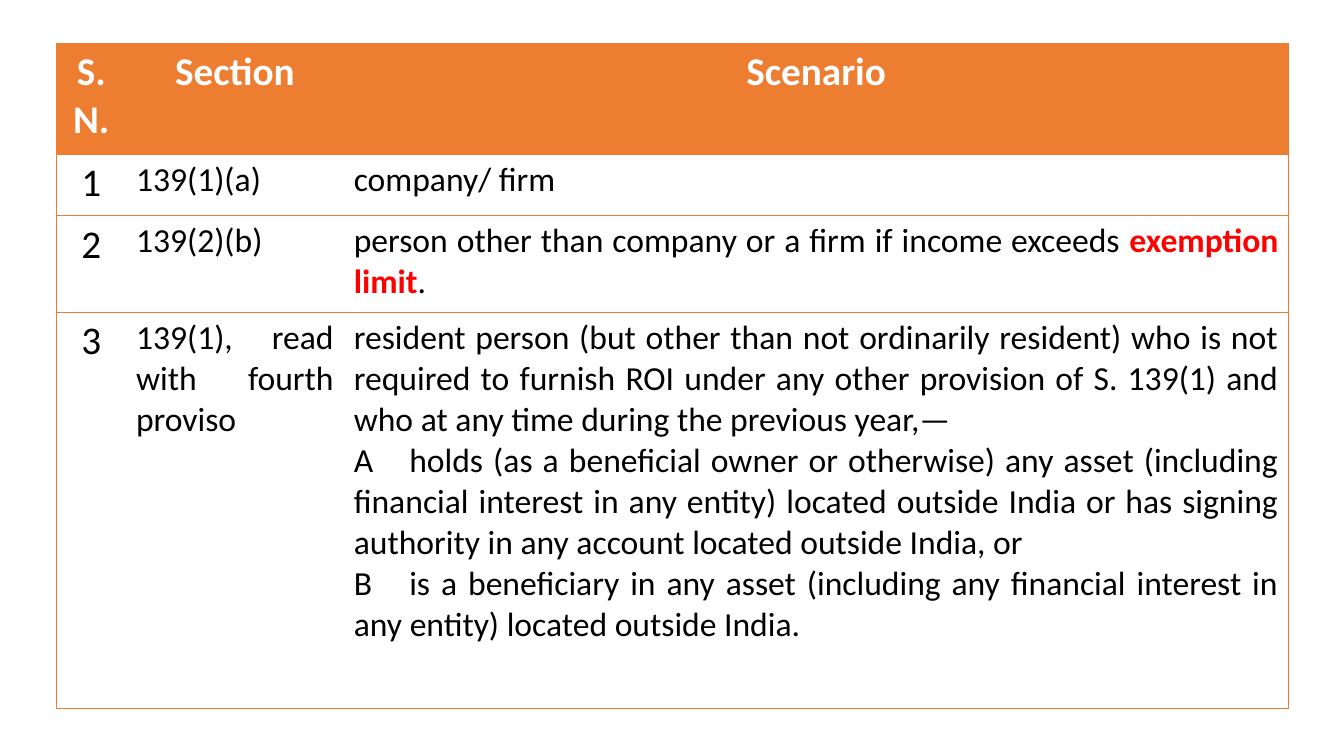
import pptx
import pptx.util
import pptx.dml.color
import pptx.enum.text
import pptx.oxml
import pptx.oxml.ns
from pptx.util import Inches

COLORS = {"orange": "ED7D31", "white": "FFFFFF", "black": "000000", "red": "FF0000"}
CENTER = pptx.enum.text.PP_ALIGN.CENTER
JUSTIFY = pptx.enum.text.PP_ALIGN.JUSTIFY
NS = pptx.oxml.ns.nsdecls("a")

# Each cell is a list of paragraphs; *stars* mark emphasis
HEADER = [["S.N."], ["Section"], ["Scenario"]]
SCENARIOS = [
    [["1"], ["139(1)(a)"], ["company/ firm"]],
    [["2"], ["139(2)(b)"],
     ["person other than company or a firm if income exceeds *exemption limit*."]],
    [["3"], ["139(1), read with fourth proviso"],
     ["resident person (but other than not ordinarily resident) who is not required "
      "to furnish ROI under any other provision of S. 139(1) and who at any time "
      "during the previous year,—",
      "A\tholds (as a beneficial owner or otherwise) any asset (including financial "
      "interest in any entity) located outside India or has signing authority in any "
      "account located outside India, or",
      "B\tis a beneficiary in any asset (including any financial interest in any "
      "entity) located outside India."]],
]


def rgb(name):
    return pptx.dml.color.RGBColor.from_string(COLORS[name])


class SlideBuilder:
    font = "Calibri"
    border_pt = 0.5

    def __init__(self, prs):
        self.s = prs.slides.add_slide(prs.slide_layouts[6])

    def paragraph(self, p, text, size, color, bold, align):
        p.alignment = align
        for i, part in enumerate(text.split("*")):
            emphasis = i % 2 == 1
            r = p.add_run()
            r.text = part
            r.font.name = self.font
            r.font.size = pptx.util.Pt(size)
            r.font.bold = bold or emphasis
            r.font.color.rgb = rgb("red" if emphasis else color)
        if "\t" in text:
            p._p.get_or_add_pPr().append(pptx.oxml.parse_xml(
                f'<a:tabLst {NS}><a:tab pos="{Inches(0.55)}" algn="l"/></a:tabLst>'))

    def borders(self, cell, drawn):
        width = pptx.util.Pt(self.border_pt)
        for side in "LRTB":
            fill = (f'<a:solidFill><a:srgbClr val="{COLORS["orange"]}"/></a:solidFill>'
                    if side in drawn else "<a:noFill/>")
            cell._tc.get_or_add_tcPr().append(pptx.oxml.parse_xml(
                f'<a:ln{side} {NS} w="{width}">{fill}</a:ln{side}>'))

    def cell(self, cell, paragraphs, fill, drawn, **style):
        self.borders(cell, drawn)
        cell.fill.solid()
        cell.fill.fore_color.rgb = rgb(fill)
        tf = cell.text_frame
        for i, text in enumerate(paragraphs):
            p = tf.add_paragraph() if i else tf.paragraphs[0]
            self.paragraph(p, text, **style)

    def table(self, rows, left, top, widths, heights):
        table = self.s.shapes.add_table(
            len(rows), len(widths), Inches(left), Inches(top),
            Inches(sum(widths)), Inches(sum(heights))).table
        table.horz_banding = False
        for column, width in zip(table.columns, widths):
            column.width = Inches(width)
        for row, height in zip(table.rows, heights):
            row.height = Inches(height)
        for i, row in enumerate(rows):
            head = i == 0
            for j, paragraphs in enumerate(row):
                # Outer frame plus horizontal rules
                drawn = "TB" + ("L" if j == 0 else "")
                drawn += "R" if j == len(row) - 1 else ""
                self.cell(table.cell(i, j), paragraphs,
                          "orange" if head else "white", drawn,
                          size=28 if head or j == 0 else 24,
                          color="white" if head else "black", bold=head,
                          align=CENTER if head or j == 0 else JUSTIFY)


def main():
    prs = pptx.Presentation()
    prs.slide_width, prs.slide_height = Inches(13.33), Inches(7.5)
    # Return-filing scenarios
    SlideBuilder(prs).table([HEADER] + SCENARIOS, 0.56, 0.43,
                            widths=[0.69, 2.16, 9.37],
                            heights=[1.1, 0.61, 0.96, 3.93])
    prs.save("out.pptx")


if __name__ == "__main__":
    main()
